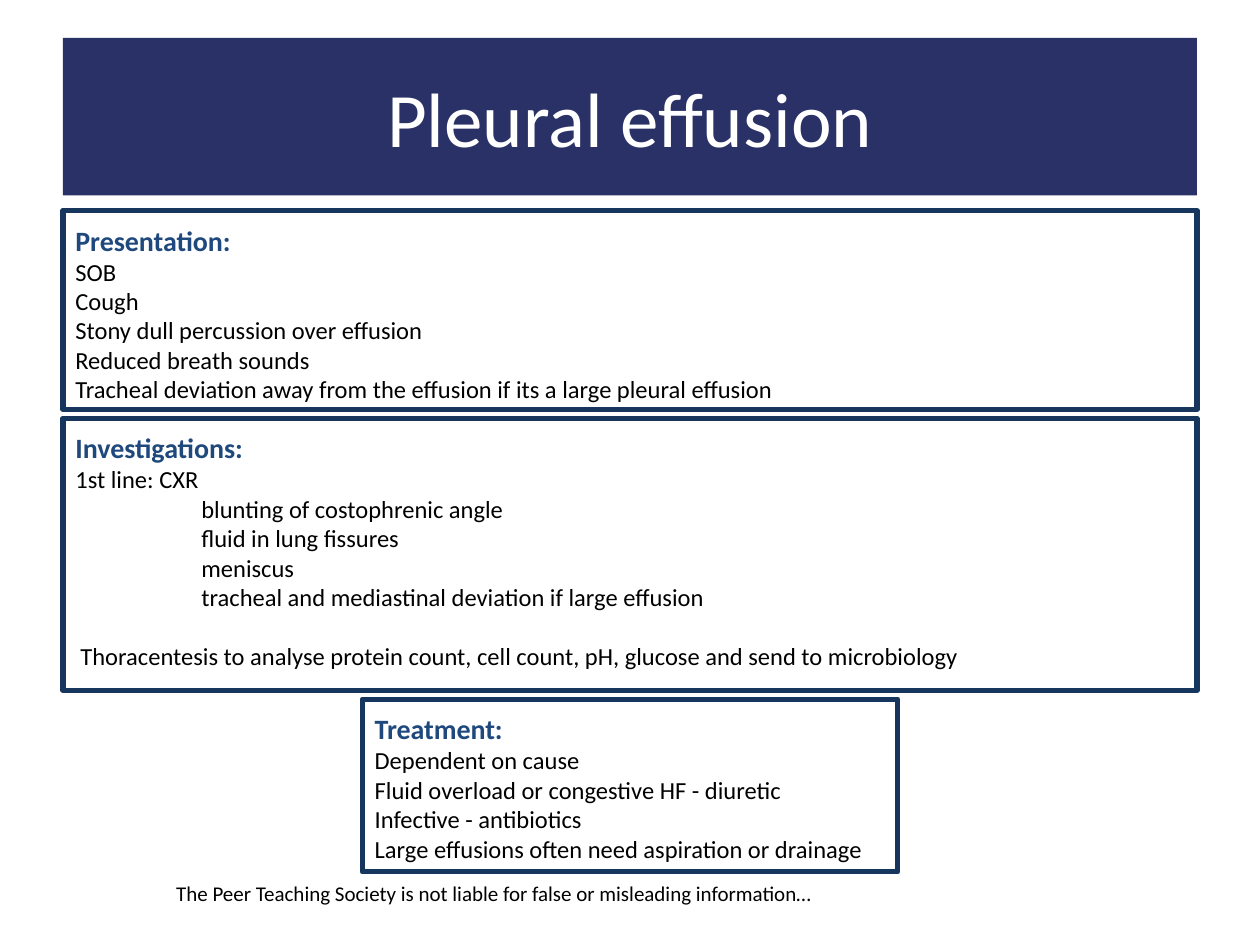
from dataclasses import dataclass

from pptx import Presentation
from pptx import util as u
from pptx.dml.color import RGBColor
from pptx.enum import shapes, text


@dataclass(frozen=True)
class Theme:
    font: str = "Calibri"
    band: str = "293167"
    edge: str = "17365D"
    head: str = "1F497D"
    ink: str = "000000"
    paper: str = "FFFFFF"
    title: int = 44
    topic: int = 16
    body: int = 14
    note: int = 12
    rule: int = 3


COLS, ROWS = 200, 150
WIDE, GAP = 180, 1.4


class Deck:
    def __init__(self, theme):
        self.theme = theme
        self.prs = Presentation()
        self.prs.slide_width, self.prs.slide_height = u.Inches(10), u.Inches(7.5)
        self.slide = self.prs.slides.add_slide(self.prs.slide_layouts[6])

    def place(self, col, row, wide, high):
        """Turn grid columns and rows into slide lengths."""
        x, y = self.prs.slide_width / COLS, self.prs.slide_height / ROWS
        return [round(n) for n in (col * x, row * y, wide * x, high * y)]

    def frame(self, shape, pad, anchor=text.MSO_ANCHOR.TOP):
        tf = shape.text_frame
        tf.word_wrap = True
        tf.vertical_anchor = anchor
        tf.margin_left = tf.margin_right = u.Inches(0.1)
        tf.margin_top = tf.margin_bottom = u.Inches(pad)
        return tf

    def add_run(self, para, words, size, color, bold=False):
        run = para.add_run()
        run.text = words
        font = run.font
        font.name, font.size, font.bold = self.theme.font, u.Pt(size), bold
        font.color.rgb = RGBColor.from_string(color)

    def box(self, row, wide, high):
        """Add a plain rectangle centred across the slide."""
        spot = self.place((COLS - wide) / 2, row, wide, high)
        shape = self.slide.shapes.add_shape(shapes.MSO_SHAPE.RECTANGLE, *spot)
        shape.shadow.inherit = False
        return shape

    def title(self, words, row, high):
        t = self.theme
        shape = self.box(row, WIDE, high)
        shape.fill.solid()
        shape.fill.fore_color.rgb = RGBColor.from_string(t.band)
        shape.line.fill.background()
        para = self.frame(shape, 0.1, text.MSO_ANCHOR.MIDDLE).paragraphs[0]
        para.alignment = text.PP_ALIGN.CENTER
        self.add_run(para, words, t.title, t.paper)

    def panel(self, topic, lines, row, wide, high):
        """Add an outlined panel; each line is (words, indent in inches, points before)."""
        t = self.theme
        shape = self.box(row, wide, high)
        shape.fill.background()
        shape.line.color.rgb = RGBColor.from_string(t.edge)
        shape.line.width = u.Pt(t.rule)
        tf = self.frame(shape, 0.1)
        para = tf.paragraphs[0]
        para.alignment = text.PP_ALIGN.LEFT
        self.add_run(para, topic, t.topic, t.head, True)
        for words, indent, before in lines:
            para = tf.add_paragraph()
            para.alignment = text.PP_ALIGN.LEFT
            para.space_before = u.Pt(before)
            para._p.get_or_add_pPr().set("marL", str(u.Inches(indent)))
            self.add_run(para, words, t.body, t.ink)

    def note(self, words, *spot):
        shape = self.slide.shapes.add_textbox(*self.place(*spot))
        para = self.frame(shape, 0.05).paragraphs[0]
        self.add_run(para, words, self.theme.note, self.theme.ink)


def plain(*lines, indent=0):
    return [(words, indent, 0) for words in lines]


SIGNS = plain(
    "SOB",
    "Cough",
    "Stony dull percussion over effusion",
    "Reduced breath sounds",
    "Tracheal deviation away from the effusion if its a large pleural effusion",
)
TESTS = [
    *plain("1st line: CXR"),
    *plain(
        "blunting of costophrenic angle",
        "fluid in lung fissures",
        "meniscus",
        "tracheal and mediastinal deviation if large effusion",
        indent=1,
    ),
    ("Thoracentesis to analyse protein count, cell count, pH, glucose "
     "and send to microbiology", 0.04, 17),
]
CARE = plain(
    "Dependent on cause",
    "Fluid overload or congestive HF - diuretic",
    "Infective - antibiotics",
    "Large effusions often need aspiration or drainage",
)
PANELS = [
    ("Presentation:", SIGNS, WIDE, 31.6),
    ("Investigations:", TESTS, WIDE, 43.2),
    ("Treatment:", CARE, 85, 27.4),
]


def main():
    deck = Deck(Theme())
    deck.note("The Peer Teaching Society is not liable for false or misleading "
              "information…", 26, 138.8, 110.8, 6)
    deck.title("Pleural effusion", 6, 25)
    row = 33.4
    for topic, lines, wide, high in PANELS:
        deck.panel(topic, lines, row, wide, high)
        row += high + GAP
    deck.prs.save("out.pptx")


if __name__ == "__main__":
    main()
